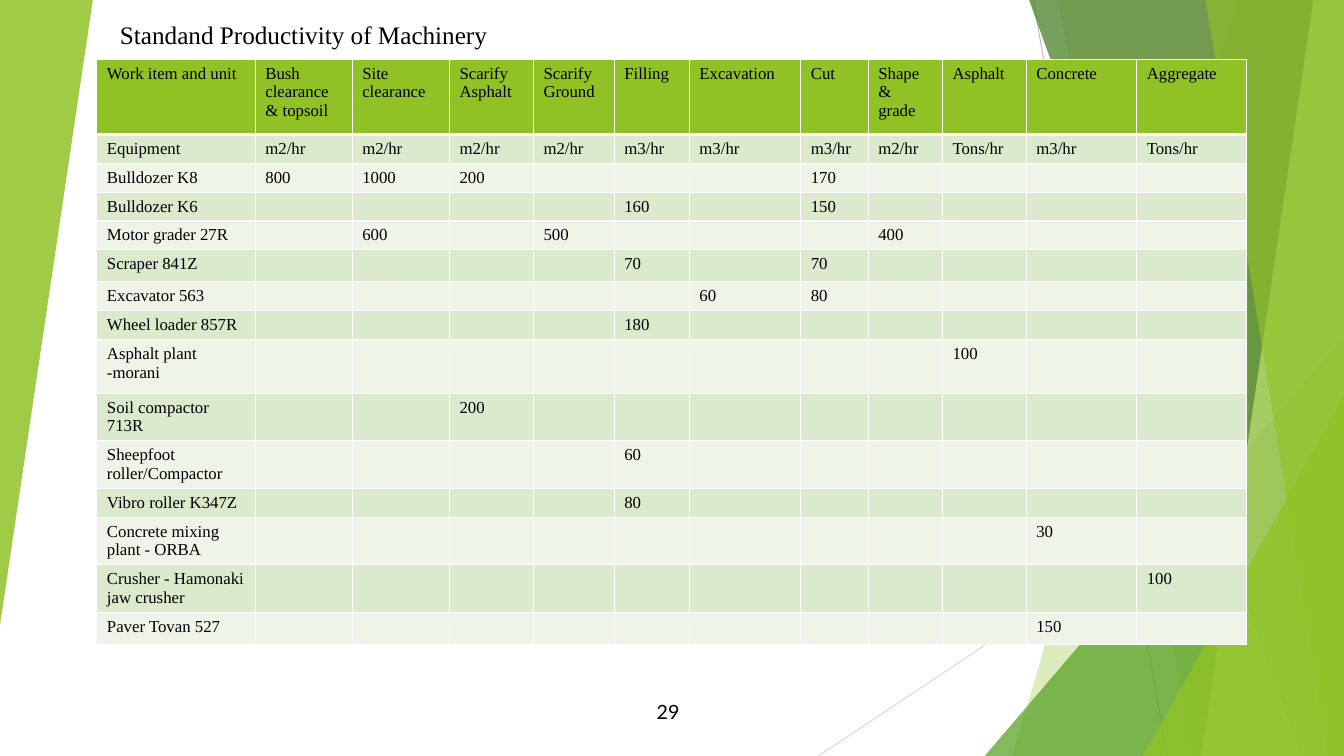
"""Build the machinery productivity slide."""
from dataclasses import dataclass

from lxml import etree
from pptx import Presentation
from pptx.dml.color import RGBColor
from pptx.enum.shapes import MSO_CONNECTOR, MSO_SHAPE
from pptx.enum.text import MSO_ANCHOR, MSO_AUTO_SIZE, PP_ALIGN
from pptx.oxml.ns import qn
from pptx.util import Pt

LEFT, RIGHT = PP_ALIGN.LEFT, PP_ALIGN.RIGHT
BOTTOM, MIDDLE = MSO_ANCHOR.BOTTOM, MSO_ANCHOR.MIDDLE
NO_FIT = MSO_AUTO_SIZE.NONE
STRAIGHT, TRIANGLE = MSO_CONNECTOR.STRAIGHT, MSO_SHAPE.ISOSCELES_TRIANGLE

BLACK = RGBColor(0x00, 0x00, 0x00)
WHITE = RGBColor(0xFF, 0xFF, 0xFF)
LIME = RGBColor(0x90, 0xC2, 0x26)
GREEN = RGBColor(0x54, 0xA0, 0x21)
DARK_GREEN = RGBColor(0x3F, 0x78, 0x19)
PALE_LIME = RGBColor(0xC0, 0xE4, 0x74)
ROW_DARK = RGBColor(0xDB, 0xE9, 0xCD)
ROW_LIGHT = RGBColor(0xEE, 0xF4, 0xE8)
GREY = RGBColor(0xBF, 0xBF, 0xBF)
LIGHT_GREY = RGBColor(0xD9, 0xD9, 0xD9)

SERIF, SANS = "Times New Roman", "Lato"
SLIDE_W, SLIDE_H = 960, 540
CELL_SIZE = 12


@dataclass
class Rule:
    x1: float
    y1: float
    x2: float
    y2: float
    color: RGBColor


@dataclass
class Band:
    top_x: float
    bottom_x: float
    color: RGBColor
    alpha: int


@dataclass
class Wedge:
    x: float
    y: float
    w: float
    h: float
    color: RGBColor
    alpha: int
    rotation: int = 0


@dataclass
class Machine:
    name: str
    height: float
    rates: dict[str, str]


RULES = [Rule(738, 0, 833.8, SLIDE_H, GREY), Rule(SLIDE_W, 290.2, 584.6, SLIDE_H, LIGHT_GREY)]
FACETS = [
    Band(884.2, 722.9, LIME, 30),
    Band(756, 851.8, LIME, 20),
    Wedge(703.4, 240, 256.6, 300, GREEN, 72),
    Band(735.1, 929.5, DARK_GREEN, 70),
    Band(938.2, 858.2, PALE_LIME, 70),
    Band(861.1, 949, LIME, 65),
    Wedge(816.5, 283, 143.5, 257, LIME, 80),
    Wedge(0, 0, 66.3, 446.4, LIME, 85, 180),
]

COLUMNS = [
    ("Work item and unit", "Equipment", 113.2),
    ("Bush clearance & topsoil", "m2/hr", 69.2),
    ("Site clearance", "m2/hr", 69.5),
    ("Scarify Asphalt", "m2/hr", 60),
    ("Scarify Ground", "m2/hr", 57.7),
    ("Filling", "m3/hr", 53.7),
    ("Excavation", "m3/hr", 79.6),
    ("Cut", "m3/hr", 48.2),
    ("Shape & grade", "m2/hr", 53),
    ("Asphalt", "Tons/hr", 59.9),
    ("Concrete", "m3/hr", 78.9),
    ("Aggregate", "Tons/hr", 78.5),
]
HEADER_H, LINE_H, TALL_H, DOUBLE_H = 53.8, 20.6, 22.9, 34
MACHINES = [
    Machine("Bulldozer K8", LINE_H, {"Bush clearance & topsoil": "800", "Site clearance": "1000",
                                     "Scarify Asphalt": "200", "Cut": "170"}),
    Machine("Bulldozer K6", LINE_H, {"Filling": "160", "Cut": "150"}),
    Machine("Motor grader 27R", LINE_H, {"Site clearance": "600", "Scarify Ground": "500",
                                         "Shape & grade": "400"}),
    Machine("Scraper 841Z", TALL_H, {"Filling": "70", "Cut": "70"}),
    Machine("Excavator 563", LINE_H, {"Excavation": "60", "Cut": "80"}),
    Machine("Wheel loader 857R", LINE_H, {"Filling": "180"}),
    Machine("Asphalt plant -morani", 38.4, {"Asphalt": "100"}),
    Machine("Soil compactor 713R", DOUBLE_H, {"Scarify Asphalt": "200"}),
    Machine("Sheepfoot roller/Compactor", DOUBLE_H, {"Filling": "60"}),
    Machine("Vibro roller K347Z", LINE_H, {"Filling": "80"}),
    Machine("Concrete mixing plant - ORBA", DOUBLE_H, {"Concrete": "30"}),
    Machine("Crusher - Hamonaki jaw crusher", DOUBLE_H, {"Aggregate": "100"}),
    Machine("Paver Tovan 527", TALL_H, {"Concrete": "150"}),
]


def write(tf, text: str, *, size: float = CELL_SIZE, font: str = SERIF, align=LEFT) -> None:
    p = tf.paragraphs[0]
    p.alignment = align
    if not text:
        end = etree.SubElement(p._p, qn("a:endParaRPr"), sz=str(size * 100))
        etree.SubElement(end, qn("a:latin"), typeface=font)
        return
    r = p.add_run()
    r.text = text
    r.font.size = Pt(size)
    r.font.name = font
    r.font.bold = False
    r.font.color.rgb = BLACK


def place_text(sp, box: tuple[float, ...], anchor, text: str, **fmt) -> None:
    sp.left, sp.top, sp.width, sp.height = (Pt(v) for v in box)
    tf = sp.text_frame
    tf.word_wrap = True
    tf.auto_size = NO_FIT
    tf.vertical_anchor = anchor
    write(tf, text, **fmt)


def draw_rule(s, rule: Rule) -> None:
    c = s.shapes.add_connector(STRAIGHT, Pt(rule.x1), Pt(rule.y1), Pt(rule.x2), Pt(rule.y2))
    c.line.color.rgb = rule.color
    c.line.width = Pt(0.75)
    etree.SubElement(c._element.spPr, qn("a:effectLst"))


def draw_facet(s, facet: Band | Wedge) -> None:
    if isinstance(facet, Band):
        fb = s.shapes.build_freeform(Pt(facet.top_x), 0)
        corners = [(SLIDE_W, 0), (SLIDE_W, SLIDE_H), (facet.bottom_x, SLIDE_H)]
        fb.add_line_segments([(Pt(x), Pt(y)) for x, y in corners])
        sp = fb.convert_to_shape()
    else:
        sp = s.shapes.add_shape(TRIANGLE, Pt(facet.x), Pt(facet.y), Pt(facet.w), Pt(facet.h))
        sp.adjustments[0] = 1
        sp.rotation = facet.rotation
    sp.shadow.inherit = False
    sp.line.fill.background()
    sp.fill.solid()
    sp.fill.fore_color.rgb = facet.color
    color = sp._element.spPr.find(qn("a:solidFill"))[0]
    etree.SubElement(color, qn("a:alpha"), val=str(facet.alpha * 1000))


def add_border(cell, side: str, width: float) -> None:
    ln = etree.SubElement(cell._tc.get_or_add_tcPr(), qn(f"a:ln{side}"), w=str(Pt(width)))
    fill = etree.SubElement(ln, qn("a:solidFill"))
    etree.SubElement(fill, qn("a:srgbClr"), val=str(WHITE))


def draw_table(s) -> None:
    titles, units, widths = zip(*COLUMNS)
    rows = [titles, units]
    rows += [(m.name, *(m.rates.get(t, "") for t in titles[1:])) for m in MACHINES]
    heights = [HEADER_H, LINE_H] + [m.height for m in MACHINES]
    table = s.shapes.add_table(len(rows), len(titles), Pt(69.2), Pt(42.3),
                               Pt(sum(widths)), Pt(sum(heights))).table
    for column, width in zip(table.columns, widths):
        column.width = Pt(width)
    for i, (texts, height) in enumerate(zip(rows, heights)):
        table.rows[i].height = Pt(height)
        color = LIME if i == 0 else ROW_DARK if i % 2 else ROW_LIGHT
        for j, text in enumerate(texts):
            cell = table.cell(i, j)
            for side in "LRTB":
                heavy = (i, side) in ((0, "B"), (1, "T"))
                add_border(cell, side, 3 if heavy else 1)
            cell.fill.solid()
            cell.fill.fore_color.rgb = color
            write(cell.text_frame, text)


def main() -> None:
    prs = Presentation()
    prs.slide_width, prs.slide_height = Pt(SLIDE_W), Pt(SLIDE_H)
    s = prs.slides.add_slide(prs.slide_layouts[5])
    for rule in RULES:
        draw_rule(s, rule)
    for facet in FACETS:
        draw_facet(s, facet)
    place_text(s.shapes.title, (78.5, 9.4, 611.3, 29.5), BOTTOM,
               "Standand Productivity of Machinery", size=18)
    number = s.shapes.add_textbox(0, 0, 0, 0)
    place_text(number, (438.5, 497.5, 54, 22.3), MIDDLE, "29", size=14, font=SANS, align=RIGHT)
    draw_table(s)
    prs.save("out.pptx")


if __name__ == "__main__":
    main()
